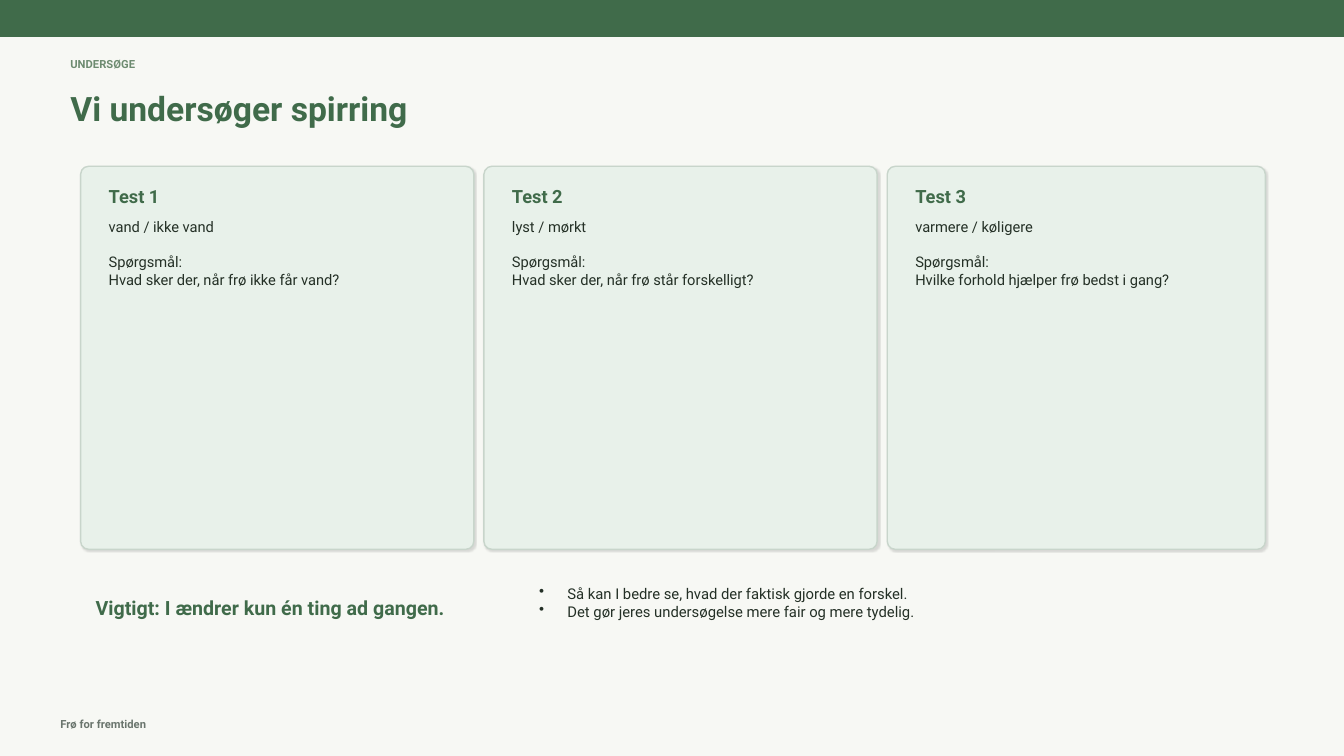
import pptx
import pptx.dml.color
import pptx.enum.shapes
import pptx.enum.text
import pptx.oxml
import pptx.oxml.ns
import pptx.util
from pptx.util import Inches

COLORS = {
    "background": "F7F8F4",
    "green": "406B4A",
    "label": "6D8B70",
    "footer": "6A756D",
    "body": "243026",
    "card": "E8F1EA",
    "card_edge": "C8D5CB",
}
FONT = "Roboto"
TESTS = [
    ("Test 1", "vand / ikke vand", "Hvad sker der, når frø ikke får vand?", 3.9),
    ("Test 2", "lyst / mørkt", "Hvad sker der, når frø står forskelligt?", 3.9),
    ("Test 3", "varmere / køligere", "Hvilke forhold hjælper frø bedst i gang?", 3.75),
]
REASONS = [
    "Så kan I bedre se, hvad der faktisk gjorde en forskel.",
    "Det gør jeres undersøgelse mere fair og mere tydelig.",
]


def rgb(color):
    """Return the named colour."""
    return pptx.dml.color.RGBColor.from_string(COLORS[color])


def add_text(slide, box, lines, size, color, bold=False):
    """Add a wrapped text box, centred vertically when bold, and return its paragraphs."""
    frame = slide.shapes.add_textbox(*map(Inches, box)).text_frame
    frame.word_wrap = True
    anchor = pptx.enum.text.MSO_ANCHOR
    frame.vertical_anchor = anchor.MIDDLE if bold else anchor.TOP
    frame.text = "\n".join(lines)
    for paragraph in frame.paragraphs:
        for run in paragraph.runs:
            run.font.name = FONT
            run.font.size = pptx.util.Pt(size)
            run.font.bold = bold
            run.font.color.rgb = rgb(color)
    return frame.paragraphs


def add_panel(slide, kind, box, fill, edge):
    """Add a filled, outlined shape without a shadow."""
    panel = slide.shapes.add_shape(kind, *map(Inches, box))
    panel.fill.solid()
    panel.fill.fore_color.rgb = rgb(fill)
    panel.line.color.rgb = rgb(edge)
    panel.line.width = pptx.util.Pt(1)
    panel.shadow.inherit = False
    return panel


def add_soft_shadow(panel):
    """Give a panel a faint shadow towards the lower right."""
    effects = panel.element.spPr.find(pptx.oxml.ns.qn("a:effectLst"))
    effects.append(pptx.oxml.parse_xml(
        f'<a:outerShdw {pptx.oxml.ns.nsdecls("a")} blurRad="12700" dist="12700" '
        'dir="2700000" algn="tl" rotWithShape="0"><a:srgbClr val="000000">'
        '<a:alpha val="12000"/></a:srgbClr></a:outerShdw>'))


def add_test_card(slide, left, width, title, contrast, question):
    """Add one test card with its heading, contrast and question."""
    card = add_panel(slide, pptx.enum.shapes.MSO_SHAPE.ROUNDED_RECTANGLE,
                     (left, 1.65, width, 3.8), "card", "card_edge")
    card.adjustments[0] = 0.021
    add_soft_shadow(card)
    inner_left, inner_width = left + 0.18, width - 0.36
    add_text(slide, (inner_left, 1.81, inner_width, 0.28), [title], 13, "green", True)
    details = add_text(slide, (inner_left, 2.11, inner_width, 3.22),
                       [contrast, "Spørgsmål:", question], 10.5, "body")
    details[1].space_before = pptx.util.Pt(12.5)


def add_bullets(slide, box, lines):
    """Add a bulleted list with hanging indents."""
    for paragraph in add_text(slide, box, lines, 10.6, "body"):
        properties = paragraph._p.get_or_add_pPr()
        properties.set("marL", str(Inches(0.28)))
        properties.set("indent", str(Inches(-0.28)))
        properties.append(pptx.oxml.parse_xml(
            f'<a:buChar {pptx.oxml.ns.nsdecls("a")} char="•"/>'))


def main():
    """Build the germination slide and save it."""
    deck = pptx.Presentation()
    deck.slide_width, deck.slide_height = Inches(13.33), Inches(7.5)
    slide = deck.slides.add_slide(deck.slide_layouts[6])
    slide.background.fill.solid()
    slide.background.fill.fore_color.rgb = rgb("background")

    add_panel(slide, pptx.enum.shapes.MSO_SHAPE.RECTANGLE,
              (0, 0, 13.33, 0.36), "green", "green")
    add_text(slide, (0.5, 7.08, 3.6, 0.2), ["Frø for fremtiden"], 8, "footer", True)
    add_text(slide, (0.6, 0.52, 3, 0.22), ["UNDERSØGE"], 8, "label", True)
    add_text(slide, (0.6, 0.86, 8.7, 0.42), ["Vi undersøger spirring"], 24, "green", True)
    for column, (title, contrast, question, width) in enumerate(TESTS):
        add_test_card(slide, 0.8 + 4 * column, width, title, contrast, question)
    add_text(slide, (0.85, 5.85, 4.2, 0.35),
             ["Vigtigt: I ændrer kun én ting ad gangen."], 14, "green", True)
    add_bullets(slide, (5.25, 5.75, 7, 0.8), REASONS)
    deck.save("out.pptx")


if __name__ == "__main__":
    main()
